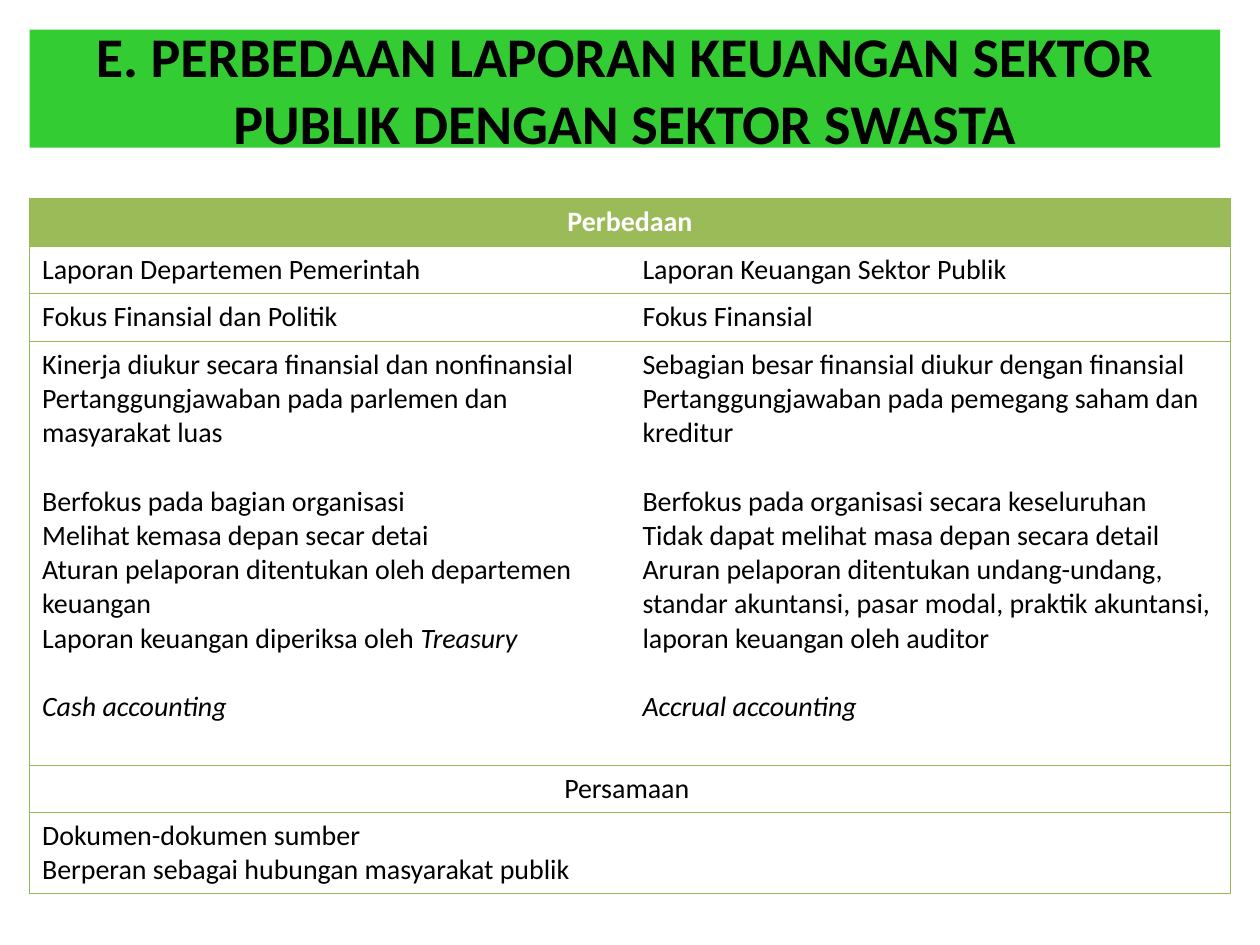
from lxml import etree
from pptx import Presentation
from pptx import util as u
from pptx.dml.color import RGBColor
from pptx.enum import shapes, text
from pptx.oxml.ns import qn

Pt = u.Pt
FONT = "Calibri"
LINE = "98B955"
TITLE = "E. PERBEDAAN LAPORAN KEUANGAN SEKTOR PUBLIK DENGAN SEKTOR SWASTA"

# Each paragraph: plain text, italic text, one-line gap above
LEFT = [
    ("Kinerja diukur secara finansial dan nonfinansial", "", False),
    ("Pertanggungjawaban pada parlemen dan masyarakat luas", "", False),
    ("Berfokus pada bagian organisasi", "", True),
    ("Melihat kemasa depan secar detai", "", False),
    ("Aturan pelaporan ditentukan oleh departemen keuangan", "", False),
    ("Laporan keuangan diperiksa oleh", " Treasury", False),
    ("", "Cash accounting", True),
]
RIGHT = [
    ("Sebagian besar finansial diukur dengan finansial", "", False),
    ("Pertanggungjawaban pada pemegang saham dan kreditur", "", False),
    ("Berfokus pada organisasi secara keseluruhan", "", True),
    ("Tidak dapat melihat masa depan secara detail", "", False),
    ("Aruran pelaporan ditentukan undang-undang, standar akuntansi, "
     "pasar modal, praktik akuntansi, laporan keuangan oleh auditor", "", False),
    ("", "Accrual accounting", True),
]
# Each row: height, cells (a single cell spans both columns)
ROWS = [
    (27.2, [[("Perbedaan", "", False)]]),
    (27.2, [[("Laporan Departemen Pemerintah", "", False)],
            [("Laporan Keuangan Sektor Publik", "", False)]]),
    (27.2, [[("Fokus Finansial dan Politik", "", False)],
            [("Fokus Finansial", "", False)]]),
    (242.3, [LEFT, RIGHT]),
    (27.2, [[("Persamaan ", "", False)]]),
    (46.3, [[("Dokumen-dokumen sumber", "", False),
             ("Berperan sebagai hubungan masyarakat publik", "", False)], []]),
]


def color(code):
    return RGBColor.from_string(code)


def style(font, size, code, bold):
    font.name, font.size, font.bold = FONT, Pt(size), bold
    font.color.rgb = color(code)


def write(cell, paras, head, mid):
    frame = cell.text_frame
    frame.text = "\n".join(plain for plain, _, _ in paras)
    for para, (_, slant, gap) in zip(frame.paragraphs, paras):
        if slant:
            run = para.add_run()
            run.text = slant
            run.font.italic = True
        if gap:
            para.space_before = Pt(19.55)
        para.alignment = text.PP_ALIGN.CENTER if mid else text.PP_ALIGN.LEFT
        for run in para.runs:
            style(run.font, 16, "FFFFFF" if head else "000000", head)


def border(cell, sides):
    """Draw the named sides and clear the others."""
    props = cell._tc.get_or_add_tcPr()
    for i, side in enumerate("LRTB"):
        line = etree.Element(qn("a:ln" + side), w=str(Pt(0.75)))
        if side in sides:
            fill = etree.SubElement(line, qn("a:solidFill"))
            etree.SubElement(fill, qn("a:srgbClr"), val=LINE)
        else:
            etree.SubElement(line, qn("a:noFill"))
        props.insert(i, line)


deck = Presentation()
deck.slide_width, deck.slide_height = Pt(720), Pt(540)
slide = deck.slides.add_slide(deck.slide_layouts[6])

# Title band
band = slide.shapes.add_shape(shapes.MSO_SHAPE.RECTANGLE,
                              Pt(16.9), Pt(16.9), Pt(680.4), Pt(67.5))
band.shadow.inherit = False
band.fill.solid()
band.fill.fore_color.rgb = color("33CC33")
band.line.fill.background()
frame = band.text_frame
frame.word_wrap = True
frame.vertical_anchor = text.MSO_ANCHOR.MIDDLE
frame.text = TITLE
frame.paragraphs[0].alignment = text.PP_ALIGN.CENTER
style(frame.paragraphs[0].runs[0].font, 32, "000000", True)

# Comparison table
high = sum(tall for tall, _ in ROWS)
table = slide.shapes.add_table(len(ROWS), 2, Pt(16.9), Pt(113.4),
                               Pt(686.2), Pt(high)).table
for r, (tall, cells) in enumerate(ROWS):
    table.rows[r].height = Pt(tall)
    wide = len(cells) == 1
    if wide:
        table.cell(r, 0).merge(table.cell(r, 1))
    for c in range(2):
        cell = table.cell(r, c)
        if r == 0:
            cell.fill.solid()
            cell.fill.fore_color.rgb = color("9BBB59")
        else:
            cell.fill.background()
        border(cell, "LRTB" if wide else "LTB" if c == 0 else "RTB")
        if c < len(cells):
            write(cell, cells[c], r == 0, wide)

deck.save("out.pptx")
